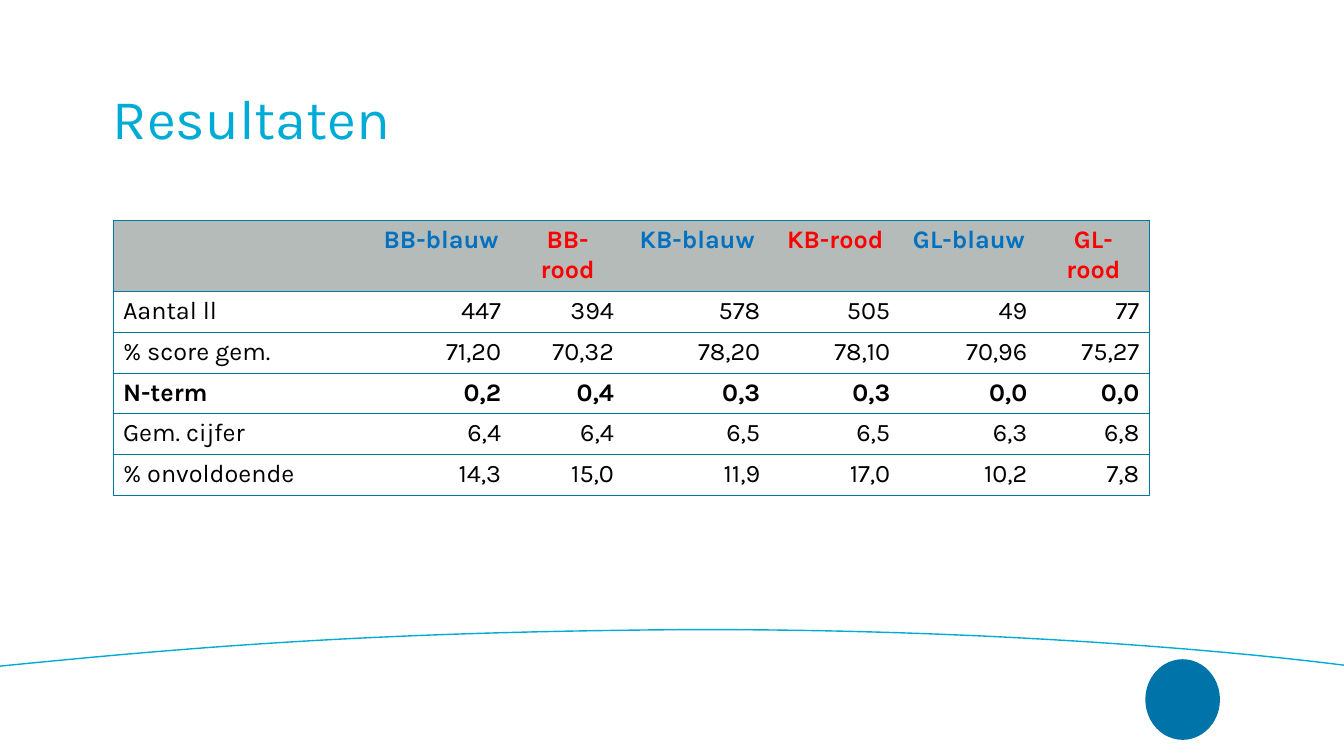
from dataclasses import dataclass

from lxml.etree import SubElement
from pptx import Presentation
from pptx.dml.color import RGBColor
from pptx.enum.shapes import MSO_SHAPE
from pptx.enum.text import MSO_ANCHOR, PP_ALIGN
from pptx.oxml.ns import qn
from pptx.util import Inches, Pt


@dataclass(frozen=True)
class Theme:
    """Colours, font and sizes of the slide."""
    font: str = "Karla"
    title_size: int = 40
    table_size: int = 18
    accent: str = "00ACD5"
    border: str = "0076A5"
    header: str = "B4BBB8"
    blue: str = "0070C0"
    red: str = "FF0000"
    text: str = "000000"
    emblem: str = "0074A8"
    curve_width: float = 1
    border_width: float = 0.5


HEADINGS = ["", "BB-blauw", "BB-rood", "KB-blauw", "KB-rood", "GL-blauw", "GL-rood"]
RESULTS = [
    ["Aantal ll", "447", "394", "578", "505", "49", "77"],
    ["% score gem.", "71,20", "70,32", "78,20", "78,10", "70,96", "75,27"],
    ["N-term", "0,2", "0,4", "0,3", "0,3", "0,0", "0,0"],
    ["Gem. cijfer", "6,4", "6,4", "6,5", "6,5", "6,3", "6,8"],
    ["% onvoldoende", "14,3", "15,0", "11,9", "17,0", "10,2", "7,8"],
]
BOLD_ROW = "N-term"
COLUMN_WIDTHS = [2.56, 1.39, 1.12, 1.45, 1.29, 1.36, 1.11]
ROW_HEIGHT = 0.405
HORIZON = [
    [(-0.01, 6.61), (1.9, 6.42), (3.6, 6.28), (6.45, 6.25)],
    [(6.45, 6.25), (9.3, 6.22), (11.92, 6.42), (13.33, 6.6)],
]
CURVE_STEPS = 30


def write_text(frame, text, *, font, size, color, bold=False,
               align=PP_ALIGN.LEFT, line_spacing=None):
    """Write one formatted paragraph into a text frame."""
    paragraph = frame.paragraphs[0]
    paragraph.alignment = align
    paragraph.line_spacing = line_spacing
    run = paragraph.add_run()
    run.text = text
    run.font.name = font
    run.font.size = Pt(size)
    run.font.bold = bold
    run.font.color.rgb = RGBColor.from_string(color)


def bezier_point(controls, t):
    """Return the point at t on a cubic curve."""
    weights = [(1 - t) ** 3, 3 * t * (1 - t) ** 2, 3 * t ** 2 * (1 - t), t ** 3]
    return tuple(Inches(sum(weight * point[axis] for weight, point in zip(weights, controls)))
                 for axis in (0, 1))


class SlideBuilder:
    """Draws themed elements on one slide."""

    def __init__(self, slide, theme):
        """Keep the slide and its theme."""
        self.slide = slide
        self.theme = theme

    def title(self, text, left, top, width, height):
        """Add the slide title."""
        shape = self.slide.shapes.add_textbox(
            Inches(left), Inches(top), Inches(width), Inches(height))
        frame = shape.text_frame
        frame.word_wrap = True
        frame.vertical_anchor = MSO_ANCHOR.MIDDLE
        frame.margin_left = frame.margin_right = frame.margin_top = frame.margin_bottom = 0
        write_text(frame, text, font=self.theme.font, size=self.theme.title_size,
                   color=self.theme.accent, line_spacing=0.9)

    def curve(self, segments):
        """Add an open line along cubic segments."""
        points = [bezier_point(controls, step / CURVE_STEPS)
                  for controls in segments for step in range(CURVE_STEPS + 1)]
        builder = self.slide.shapes.build_freeform(*points[0])
        builder.add_line_segments(points[1:], close=False)
        shape = builder.convert_to_shape()
        shape.shadow.inherit = False
        shape.fill.background()
        shape.line.color.rgb = RGBColor.from_string(self.theme.accent)
        shape.line.width = Pt(self.theme.curve_width)

    def emblem(self, left, top, width, height):
        """Add a plain emblem."""
        shape = self.slide.shapes.add_shape(
            MSO_SHAPE.OVAL, Inches(left), Inches(top), Inches(width), Inches(height))
        shape.shadow.inherit = False
        shape.fill.solid()
        shape.fill.fore_color.rgb = RGBColor.from_string(self.theme.emblem)
        shape.line.fill.background()

    def borders(self, cell, visible):
        """Draw the visible cell edges and clear the others."""
        properties = cell._tc.get_or_add_tcPr()
        for edge in "LRTB":
            line = SubElement(properties, qn(f"a:ln{edge}"),
                              w=str(Pt(self.theme.border_width)))
            if edge in visible:
                fill = SubElement(line, qn("a:solidFill"))
                SubElement(fill, qn("a:srgbClr"), val=self.theme.border)
            else:
                SubElement(line, qn("a:noFill"))

    def table(self, rows, left, top):
        """Add the results table with its header row."""
        theme = self.theme
        table = self.slide.shapes.add_table(
            len(rows), len(COLUMN_WIDTHS), Inches(left), Inches(top),
            Inches(sum(COLUMN_WIDTHS)), Inches(ROW_HEIGHT * len(rows))).table
        table.first_row = table.horz_banding = False
        for column, width in zip(table.columns, COLUMN_WIDTHS):
            column.width = Inches(width)
        for row_index, values in enumerate(rows):
            table.rows[row_index].height = Inches(ROW_HEIGHT)
            for column_index, value in enumerate(values):
                cell = table.cell(row_index, column_index)
                edges = "TB" + {0: "L", len(values) - 1: "R"}.get(column_index, "")
                self.borders(cell, edges)
                color, align = theme.text, PP_ALIGN.RIGHT
                if row_index == 0:
                    cell.fill.solid()
                    cell.fill.fore_color.rgb = RGBColor.from_string(theme.header)
                    color = theme.blue if value.endswith("blauw") else theme.red
                    align = PP_ALIGN.CENTER
                else:
                    cell.fill.background()
                    if column_index == 0:
                        align = PP_ALIGN.LEFT
                if value:
                    write_text(cell.text_frame, value, font=theme.font,
                               size=theme.table_size, color=color, align=align,
                               bold=row_index == 0 or values[0] == BOLD_ROW)


def main():
    """Build and save the presentation."""
    presentation = Presentation()
    presentation.slide_width = Inches(13.33)
    presentation.slide_height = Inches(7.5)
    slide = presentation.slides.add_slide(presentation.slide_layouts[6])
    builder = SlideBuilder(slide, Theme())
    builder.emblem(11.36, 6.54, 0.74, 0.8)
    builder.curve(HORIZON)
    builder.title("Resultaten", 1.12, 0.48, 11.1, 1.45)
    builder.table([HEADINGS] + RESULTS, 1.12, 2.19)
    presentation.save("out.pptx")


if __name__ == "__main__":
    main()
